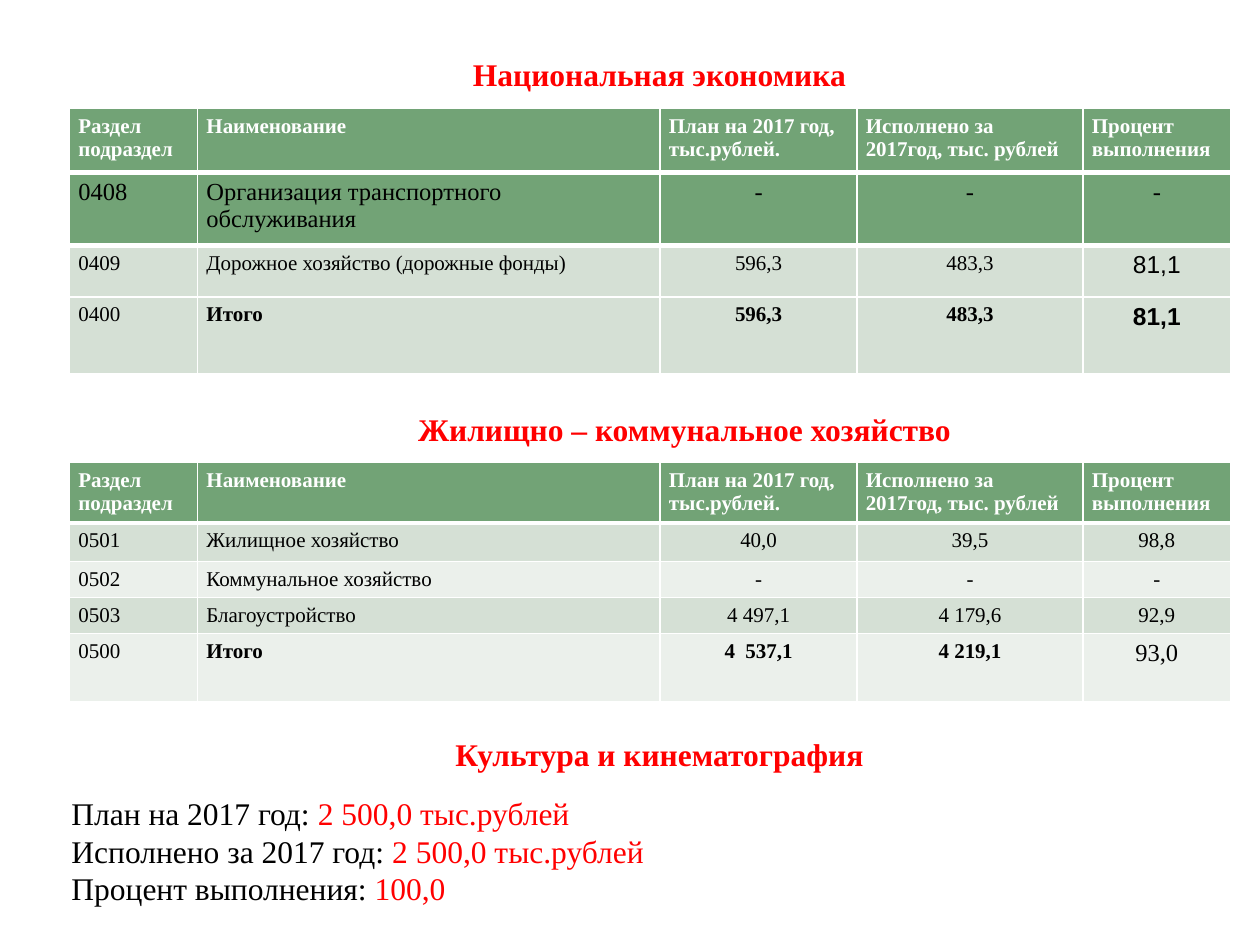
"""Build a budget slide with two expenditure tables and a culture summary."""
import dataclasses

import lxml.etree
import pptx
import pptx.dml.color
import pptx.enum.text
import pptx.oxml.ns
import pptx.slide
import pptx.table
import pptx.text.text
import pptx.util

Pt = pptx.util.Pt
ALIGN = pptx.enum.text.PP_ALIGN
SERIF, SANS = "Times New Roman", "Arial"
COLORS = {"red": "FF0000", "black": "000000", "white": "FFFFFF",
          "green": "72A376", "band": "D5E0D5", "pale": "EBF0EB"}
COL_WIDTHS = (73.2, 264.3, 112.5, 129.2, 84.3)
TABLE_LEFT = 39.8
THIN, THICK = 0.96, 3
HEADERS = ("Раздел подраздел", "Наименование", "План на 2017 год, тыс.рублей.",
           "Исполнено за 2017год, тыс. рублей", "Процент\nвыполнения")


@dataclasses.dataclass
class Row:
    """One table row, with the font of its percentage cell."""
    height: float
    fill: str
    texts: tuple[str, ...]
    size: float = 12
    total: bool = False
    percent_size: float = 12
    percent_font: str = SERIF
    percent_bold: bool = False
    header: bool = False


@dataclasses.dataclass
class Heading:
    """A red section heading."""
    text: str
    left: float
    top: float
    width: float
    height: float = 33.8


def add_run(p: pptx.text.text._Paragraph, text: str, *, size: float = 18,
            color: str = "black", bold: bool = False, font: str = SERIF) -> None:
    """Add a formatted run to a paragraph."""
    r = p.add_run()
    r.text = text
    r.font.size, r.font.bold, r.font.name = Pt(size), bold, font
    r.font.color.rgb = pptx.dml.color.RGBColor.from_string(COLORS[color])


def add_box(s: pptx.slide.Slide, left: float, top: float, width: float,
            height: float) -> pptx.text.text.TextFrame:
    """Add a text box and return its text frame."""
    sp = s.shapes.add_textbox(Pt(left), Pt(top), Pt(width), Pt(height))
    tf = sp.text_frame
    tf.word_wrap = True
    return tf


def add_heading(s: pptx.slide.Slide, h: Heading) -> None:
    """Draw a section heading."""
    tf = add_box(s, h.left, h.top, h.width, h.height)
    add_run(tf.paragraphs[0], h.text, color="red", bold=True)


def set_borders(cell: pptx.table._Cell, top: float, bottom: float) -> None:
    """Give a cell white borders with the given top and bottom widths."""
    tc_pr = cell._tc.get_or_add_tcPr()
    qn = pptx.oxml.ns.qn
    for side, width in (("L", THIN), ("R", THIN), ("T", top), ("B", bottom)):
        ln = lxml.etree.SubElement(tc_pr, qn(f"a:ln{side}"), w=str(int(Pt(width))))
        fill = lxml.etree.SubElement(ln, qn("a:solidFill"))
        lxml.etree.SubElement(fill, qn("a:srgbClr"), val=COLORS["white"])


def fill_cell(cell: pptx.table._Cell, row: Row, col: int) -> None:
    """Fill one cell with its colour and formatted text."""
    cell.fill.solid()
    cell.fill.fore_color.rgb = pptx.dml.color.RGBColor.from_string(COLORS[row.fill])
    cell.margin_left = cell.margin_right = Pt(5)
    cell.margin_top, cell.margin_bottom = Pt(3.4), Pt(2.4)
    style = {"size": row.size, "bold": row.header or (row.total and col > 0),
             "color": "white" if row.header else "black"}
    if col == len(COL_WIDTHS) - 1 and not row.header:
        style.update(size=row.percent_size, font=row.percent_font, bold=row.percent_bold)
    tf = cell.text_frame
    for i, line in enumerate(row.texts[col].split("\n")):
        p = tf.add_paragraph() if i else tf.paragraphs[0]
        p.alignment = ALIGN.LEFT if row.header or col < 2 else ALIGN.CENTER
        add_run(p, line, **style)


def add_budget_table(s: pptx.slide.Slide, top: float, rows: list[Row],
                     thick_rules: set[int]) -> None:
    """Draw a table whose horizontal rules in thick_rules are heavier."""
    frame = s.shapes.add_table(len(rows), len(COL_WIDTHS), Pt(TABLE_LEFT), Pt(top),
                               Pt(sum(COL_WIDTHS)), Pt(sum(r.height for r in rows)))
    table = frame.table
    table.horz_banding = False
    for col, width in zip(table.columns, COL_WIDTHS):
        col.width = Pt(width)
    rules = [THICK if i in thick_rules else THIN for i in range(len(rows) + 1)]
    for i, row in enumerate(rows):
        table.rows[i].height = Pt(row.height)
        for j in range(len(COL_WIDTHS)):
            cell = table.cell(i, j)
            set_borders(cell, rules[i], rules[i + 1])
            fill_cell(cell, row, j)


def main() -> None:
    """Build and save the slide."""
    prs = pptx.Presentation()
    prs.slide_width, prs.slide_height = Pt(720), Pt(540)
    s = prs.slides.add_slide(prs.slide_layouts[6])
    economy = [
        Row(36.7, "green", HEADERS, header=True),
        Row(41.8, "green", ("0408", "Организация транспортного обслуживания", "-", "-", "-"),
            size=14, percent_size=14),
        Row(29.2, "band", ("0409", "Дорожное хозяйство (дорожные фонды)",
                           "596,3", "483,3", "81,1"), percent_size=14, percent_font=SANS),
        Row(43.9, "band", ("0400", "Итого", "596,3", "483,3", "81,1"), total=True,
            percent_size=14, percent_font=SANS, percent_bold=True),
    ]
    housing = [
        Row(33.4, "green", HEADERS, header=True),
        Row(22, "band", ("0501", "Жилищное хозяйство", "40,0", "39,5", "98,8")),
        Row(20.6, "pale", ("0502", "Коммунальное хозяйство", "-", "-", "-")),
        Row(20.6, "band", ("0503", "Благоустройство", "4 497,1", "4 179,6", "92,9")),
        Row(39.2, "pale", ("0500", "Итого", "4  537,1", "4 219,1", "93,0"),
            total=True, percent_size=14),
    ]
    add_budget_table(s, 62, economy, {1, 2})
    add_heading(s, Heading("Национальная экономика", 263.2, 28, 234, 50.4))
    add_budget_table(s, 264.3, housing, {1})
    add_heading(s, Heading("Жилищно – коммунальное хозяйство", 231.8, 230.7, 326))
    add_heading(s, Heading("Культура и кинематография", 253.2, 416.2, 314.6))

    tf = add_box(s, 33.8, 450, 489.6, 73.4)
    summary = (("План на 2017 год: ", "2 500,0 тыс.рублей"),
               ("Исполнено за 2017 год: ", "2 500,0 тыс.рублей"),
               ("Процент выполнения: ", "100,0"))
    for i, (label, value) in enumerate(summary):
        p = tf.add_paragraph() if i else tf.paragraphs[0]
        p.alignment = ALIGN.LEFT if i else ALIGN.JUSTIFY
        add_run(p, label)
        add_run(p, value, color="red")
    prs.save("out.pptx")


if __name__ == "__main__":
    main()
